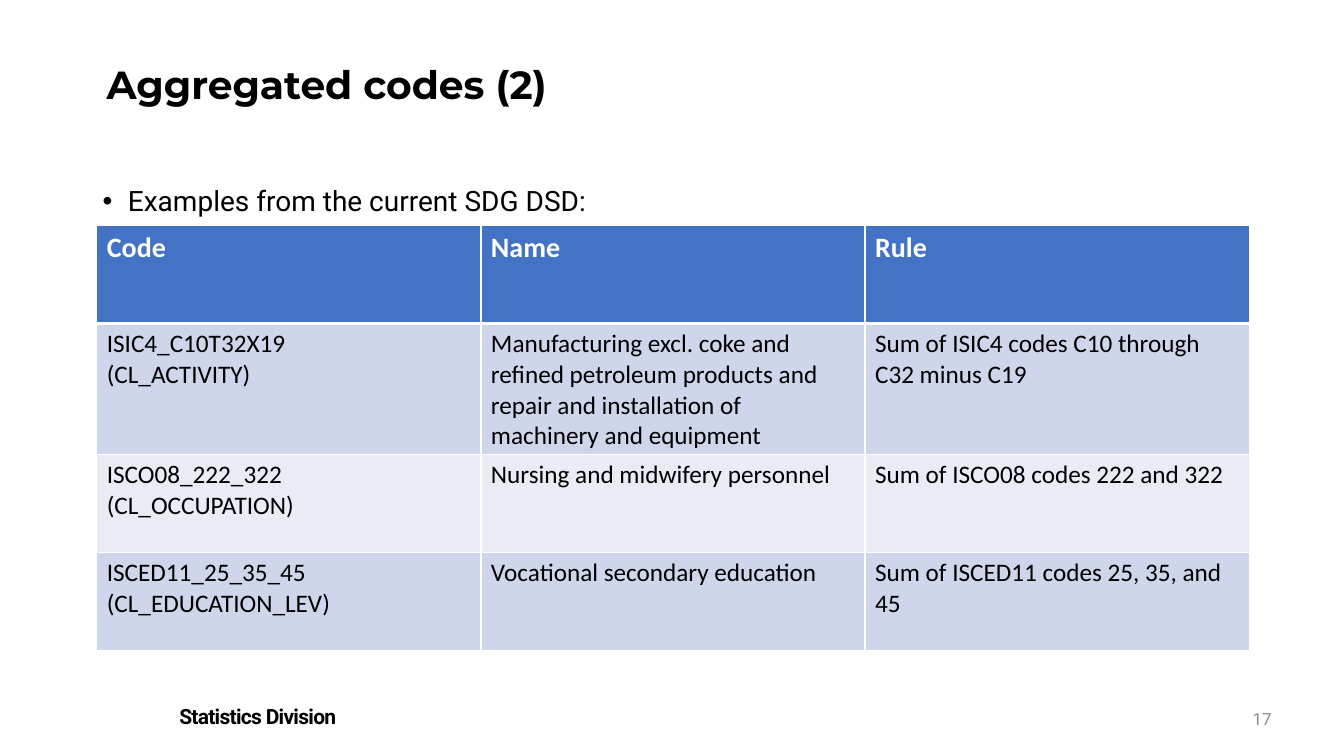
"""Build the slide on aggregated codes, with a table of examples."""
from dataclasses import dataclass

from lxml import etree
from pptx import Presentation
from pptx import util as u
from pptx.dml.color import RGBColor
from pptx.enum import shapes, text
from pptx.oxml import ns

TITLE = "Aggregated codes (2)"
BULLET = "Examples from the current SDG DSD:"
FOOTER = "Statistics Division"
PAGE_NUMBER = "17"
ROWS = [
    ("Code", "Name", "Rule"),
    ("ISIC4_C10T32X19\n(CL_ACTIVITY)",
     "Manufacturing excl. coke and refined petroleum products and "
     "repair and installation of machinery and equipment",
     "Sum of ISIC4 codes C10 through C32 minus C19"),
    ("ISCO08_222_322\n(CL_OCCUPATION)",
     "Nursing and midwifery personnel",
     "Sum of ISCO08 codes 222 and 322"),
    ("ISCED11_25_35_45\n(CL_EDUCATION_LEV)",
     "Vocational secondary education",
     "Sum of ISCED11 codes 25, 35, and 45"),
]
ROW_HEIGHTS = (0.97, 0.99, 0.97, 0.97)
COLUMN_WIDTH = 3.81
TABLE_LEFT, TABLE_TOP = 0.96, 2.24


@dataclass(frozen=True)
class Theme:
    """Fonts, colours and type sizes of the slide."""
    heading: str = "Montserrat"
    body: str = "Roboto"
    table: str = "Calibri"
    black: str = "000000"
    white: str = "FFFFFF"
    grey: str = "8C8C8C"
    header: str = "4472C4"
    bands: tuple = ("E9EBF5", "CFD5EA")
    title_size: int = 28
    body_size: int = 20
    cell_size: int = 18
    footer_size: int = 15
    number_size: int = 12


THEME = Theme()


def style(para, face, size, color, bold=False):
    """Format every run of a paragraph."""
    for span in para.runs:
        span.font.name = face
        span.font.size = u.Pt(size)
        span.font.bold = bold
        span.font.color.rgb = RGBColor.from_string(color)


def write(box, words, *look):
    """Put one styled paragraph in a box and return it."""
    box.text_frame.word_wrap = True
    box.text_frame.text = words
    para = box.text_frame.paragraphs[0]
    style(para, *look)
    return para


def add_box(page, *place):
    """Add a text box at left, top, width, height in inches."""
    return page.shapes.add_textbox(*map(u.Inches, place))


def add_footer(page):
    """Add the division name and the page number."""
    band = page.shapes.add_shape(
        shapes.MSO_SHAPE.RECTANGLE, *map(u.Inches, (1.68, 6.93, 5.84, 0.35)))
    band.shadow.inherit = False
    band.fill.solid()
    band.fill.fore_color.rgb = RGBColor.from_string(THEME.white)
    band.line.fill.background()
    band.text_frame.vertical_anchor = text.MSO_ANCHOR.TOP
    para = write(band, FOOTER, THEME.body, THEME.footer_size, THEME.black, True)
    para.alignment = text.PP_ALIGN.LEFT
    para.runs[0].font._element.set("spc", "-50")

    number = add_box(page, 12.07, 6.93, 0.64, 0.4)
    number.text_frame.vertical_anchor = text.MSO_ANCHOR.MIDDLE
    para = write(number, PAGE_NUMBER, THEME.body, THEME.number_size, THEME.grey)
    para.alignment = text.PP_ALIGN.RIGHT


def add_bullet(page):
    """Add the bulleted introduction to the table."""
    para = write(add_box(page, 0.92, 1.71, 12.14, 4.76), BULLET,
                 THEME.body, THEME.body_size, THEME.black)
    para.line_spacing = 1.2
    para.space_after = u.Pt(6)
    props = para._p.get_or_add_pPr()
    props.set("marL", str(u.Inches(0.25)))
    props.set("indent", str(-u.Inches(0.25)))
    etree.SubElement(props, ns.qn("a:buFont")).set("typeface", "Arial")
    etree.SubElement(props, ns.qn("a:buChar")).set("char", "•")


def add_borders(cell, widths):
    """Draw white borders, with widths in points keyed by side."""
    props = cell._tc.get_or_add_tcPr()
    for side, width in widths.items():
        line = etree.SubElement(props, ns.qn(f"a:ln{side}"), w=str(u.Pt(width)))
        fill = etree.SubElement(line, ns.qn("a:solidFill"))
        etree.SubElement(fill, ns.qn("a:srgbClr"), val=THEME.white)


def add_code_table(page):
    """Add the table of codes, names and rules."""
    columns = len(ROWS[0])
    place = (TABLE_LEFT, TABLE_TOP, COLUMN_WIDTH * columns, sum(ROW_HEIGHTS))
    table = page.shapes.add_table(
        len(ROWS), columns, *map(u.Inches, place)).table
    for column in table.columns:
        column.width = u.Inches(COLUMN_WIDTH)
    for index, (row, words) in enumerate(zip(table.rows, ROWS)):
        row.height = u.Inches(ROW_HEIGHTS[index])
        is_header = index == 0
        widths = {"L": 1, "R": 1, "T": 3 if index == 1 else 1,
                  "B": 3 if is_header else 1}
        shade = THEME.header if is_header else THEME.bands[index % 2]
        size = THEME.body_size if is_header else THEME.cell_size
        color = THEME.white if is_header else THEME.black
        for cell, entry in zip(row.cells, words):
            add_borders(cell, widths)
            cell.fill.solid()
            cell.fill.fore_color.rgb = RGBColor.from_string(shade)
            cell.text_frame.text = entry
            for para in cell.text_frame.paragraphs:
                style(para, THEME.table, size, color, is_header)


def main():
    """Create and save the deck."""
    deck = Presentation()
    deck.slide_width, deck.slide_height = u.Inches(13.33), u.Inches(7.5)
    page = deck.slides.add_slide(deck.slide_layouts[6])
    add_footer(page)
    title = write(add_box(page, 0.96, 0.6, 10.86, 0.91), TITLE,
                  THEME.heading, THEME.title_size, THEME.black, True)
    title.line_spacing = 0.9
    add_bullet(page)
    add_code_table(page)
    deck.save("out.pptx")


if __name__ == "__main__":
    main()
